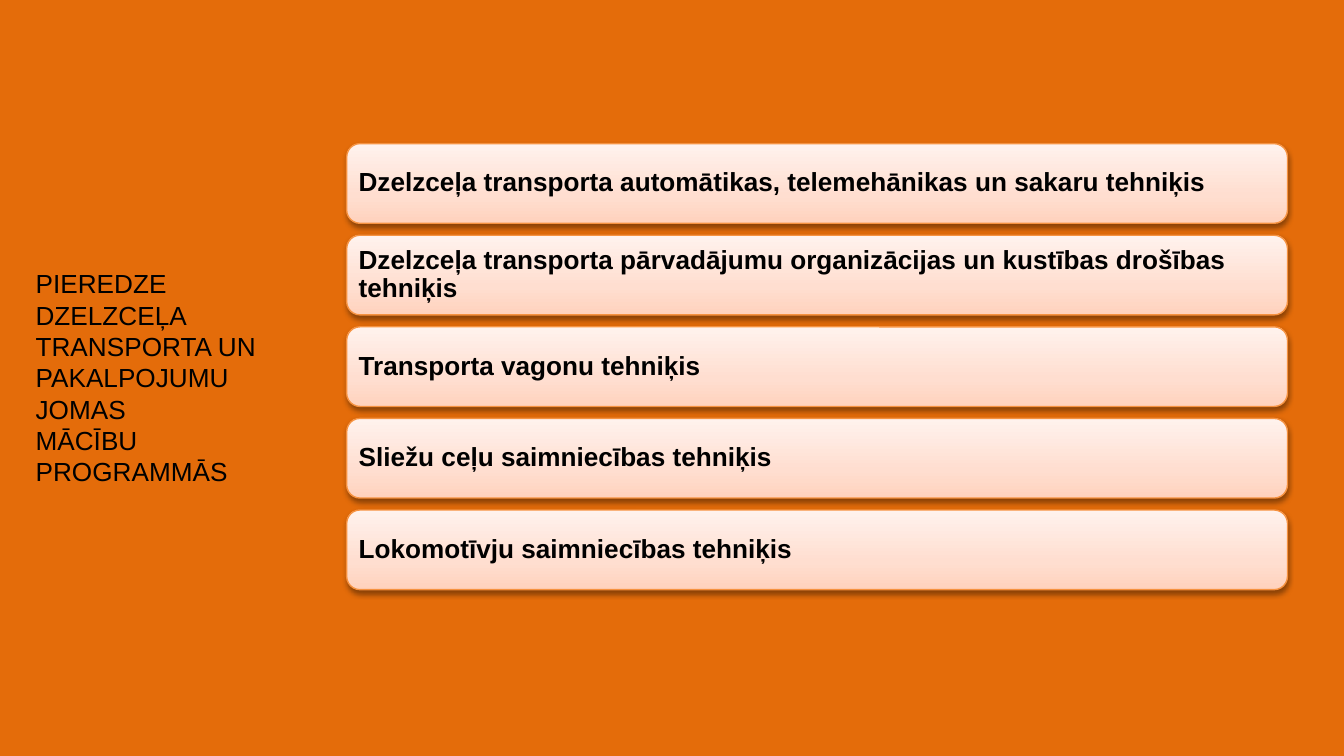
import pptx
import pptx.util
import pptx.oxml
from pptx.dml.color import RGBColor
from pptx.enum.shapes import MSO_SHAPE
from pptx.enum.text import MSO_ANCHOR, MSO_AUTO_SIZE, PP_ALIGN

WIDTH = pptx.util.Inches(10)
HEIGHT = WIDTH * 9 // 16
COLORS = {"background": "E46C0A", "border": "F69240", "text": "000000", "shadow": "000000"}
CARD_STOPS = [(0, "FFD2BD"), (35, "FFDED0"), (100, "FFF2ED")]
A_NS = 'xmlns:a="http://schemas.openxmlformats.org/drawingml/2006/main"'
TITLE = ["PIEREDZE DZELZCEĻA", "TRANSPORTA UN", "PAKALPOJUMU", "JOMAS", "MĀCĪBU", "PROGRAMMĀS"]
PROGRAMMES = [
    "Dzelzceļa transporta automātikas, telemehānikas un sakaru tehniķis",
    "Dzelzceļa transporta pārvadājumu organizācijas un kustības drošības tehniķis",
    "Transporta vagonu tehniķis",
    "Sliežu ceļu saimniecības tehniķis",
    "Lokomotīvju saimniecības tehniķis",
]


def rgb(name):
    return RGBColor.from_string(COLORS[name])


def share_box(left, top, width, height):
    """Turn shares of the slide's size into a box of lengths."""
    return int(left * WIDTH), int(top * HEIGHT), int(width * WIDTH), int(height * HEIGHT)


def style_text(p, bold=False):
    p.alignment = PP_ALIGN.LEFT
    p.font.name = "Arial"
    p.font.size = pptx.util.Pt(14)
    p.font.bold = bold
    p.font.color.rgb = rgb("text")


def add_background(slide):
    sp = slide.shapes.add_shape(MSO_SHAPE.RECTANGLE, 0, 0, WIDTH, HEIGHT)
    sp.shadow.inherit = False
    sp.fill.solid()
    sp.fill.fore_color.rgb = rgb("background")
    sp.line.fill.background()
    slide.shapes._spTree.insert(2, sp._element)  # behind the title


def place_title(slide, box):
    sp = slide.shapes.title
    sp.left, sp.top, sp.width, sp.height = box
    tf = sp.text_frame
    tf.text = "\n".join(TITLE)
    tf.word_wrap = True
    tf.auto_size = MSO_AUTO_SIZE.SHAPE_TO_FIT_TEXT
    tf.vertical_anchor = MSO_ANCHOR.TOP
    for p in tf.paragraphs:
        style_text(p)


def style_card(sp):
    """Give a card its three-stop gradient, thin border and soft shadow."""
    sp.fill.gradient()
    sp.fill.gradient_angle = 90
    stops = sp._element.spPr.find(".//" + pptx.oxml.ns.qn("a:gsLst"))
    stops.clear()
    for share, color in CARD_STOPS:
        stops.append(pptx.oxml.parse_xml(
            f'<a:gs {A_NS} pos="{share * 1000}"><a:srgbClr val="{color}"/></a:gs>'))
    sp.line.color.rgb = rgb("border")
    sp.line.width = pptx.util.Pt(0.75)
    sp.shadow.inherit = False
    effects = sp._element.spPr.find(pptx.oxml.ns.qn("a:effectLst"))
    effects.append(pptx.oxml.parse_xml(
        f'<a:outerShdw {A_NS} blurRad="{pptx.util.Pt(3.1)}" dist="{pptx.util.Pt(1.6)}" '
        f'dir="5400000" rotWithShape="0"><a:srgbClr val="{COLORS["shadow"]}">'
        '<a:alpha val="38000"/></a:srgbClr></a:outerShdw>'))


def add_programme_cards(slide, box, gap_ratio=0.15):
    """Stack equal cards in the box; gap_ratio is the gap per card height."""
    left, top, width, height = box
    count = len(PROGRAMMES)
    card_height = int(height / (count + (count - 1) * gap_ratio))
    for row, text in enumerate(PROGRAMMES):
        y = top + int(row * card_height * (1 + gap_ratio))
        sp = slide.shapes.add_shape(MSO_SHAPE.ROUNDED_RECTANGLE, left, y, width, card_height)
        style_card(sp)
        tf = sp.text_frame
        tf.word_wrap = True
        tf.vertical_anchor = MSO_ANCHOR.MIDDLE
        tf.margin_left = tf.margin_right = pptx.util.Inches(0.06)
        tf.margin_top = tf.margin_bottom = pptx.util.Inches(0.06)
        p = tf.paragraphs[0]
        p.text = text
        p.line_spacing = 0.9
        style_text(p, bold=True)


def main():
    prs = pptx.Presentation()
    prs.slide_width, prs.slide_height = WIDTH, HEIGHT
    slide = prs.slides.add_slide(prs.slide_layouts[5])
    add_background(slide)
    add_programme_cards(slide, share_box(0.258, 0.19, 0.7, 0.59))
    place_title(slide, share_box(0.0165, 0.345, 0.2, 0.31))
    prs.save("out.pptx")


if __name__ == "__main__":
    main()
